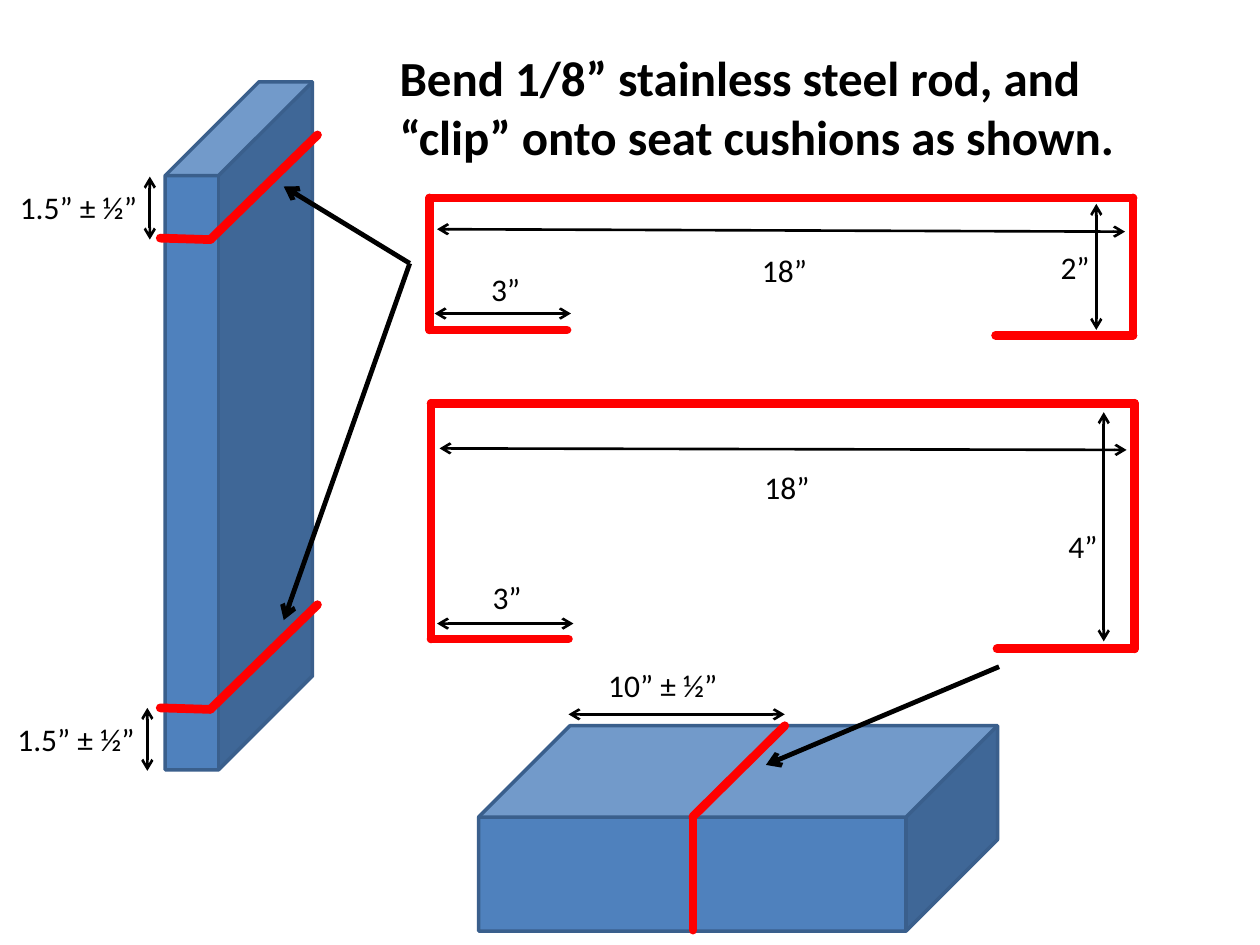
"""Build a slide showing how to bend steel rod into clips for seat cushions."""
from itertools import pairwise

from lxml import etree
from pptx import Presentation
from pptx.dml.color import RGBColor
from pptx.enum.shapes import MSO_CONNECTOR, MSO_SHAPE
from pptx.enum.text import MSO_ANCHOR, MSO_AUTO_SIZE, PP_ALIGN
from pptx.oxml.ns import qn
from pptx.util import Cm, Pt

STRAIGHT, CUBE = MSO_CONNECTOR.STRAIGHT, MSO_SHAPE.CUBE
TOP, LEFT, NO_FIT = MSO_ANCHOR.TOP, PP_ALIGN.LEFT, MSO_AUTO_SIZE.NONE

THEME = {
    "font": "Calibri", "title": 28, "label": 18,
    "ink": "000000", "rod": "FF0000", "cushion": "4F81BD", "edge": "3A5F8C",
    "rod_width": 5, "dimension_width": 1.5, "pointer_width": 2.75, "edge_width": 2,
}

TITLE = "Bend 1/8” stainless steel rod, and “clip” onto seat cushions as shown."
TITLE_BOX = (7.8, 0.84, 16.31, 2.64)
LABEL_HEIGHT = 1.03

CUSHIONS = [((3.33, 1.65, 2.97, 13.87), 0.637), ((9.65, 14.63, 10.46, 4.14), 0.445)]

UPRIGHT_ROD = [(3.23, 4.8), (4.24, 4.83), (6.4, 2.72)]
UPRIGHT_ROD_GAP = 9.47
FLAT_ROD = [(13.97, 18.75), (13.97, 16.46), (15.82, 14.63)]

CLIP_WIDTH, CLIP_FOOT = 14.18, 2.77
CLIPS = [
    {"left": 8.66, "top": 3.99, "left_drop": 2.66, "right_drop": 2.77},
    {"left": 8.69, "top": 8.13, "left_drop": 4.75, "right_drop": 4.95},
]

DIMENSIONS = [
    ("1.5” ± ½”", (0.15, 3.66, 3.18), (3.02, 3.56), (3.02, 4.83)),
    ("1.5” ± ½”", (0.1, 14.4, 3.18), (2.97, 14.27), (2.97, 15.54)),
    ("10” ± ½”", (12.01, 13.31, 3.18), (15.82, 14.4), (11.46, 14.4)),
    ("2”", (21.13, 4.88, 1.27), (22.1, 4.11), (22.1, 6.65)),
    ("3”", (9.65, 5.31, 1.27), (11.51, 6.32), (8.76, 6.32)),
    ("18”", (15.11, 4.93, 1.57), (22.68, 4.67), (8.81, 4.62)),
    ("3”", (9.68, 11.53, 1.27), (11.56, 12.57), (8.81, 12.57)),
    ("18”", (15.16, 9.32, 1.57), (22.71, 9.07), (8.86, 9.04)),
    ("4”", (21.29, 10.49, 1.27), (22.25, 8.31), (22.25, 12.93)),
]

POINTERS = [
    ((8.26, 5.31), (5.72, 3.76)),
    ((8.26, 5.31), (5.72, 12.5)),
    ((20.14, 13.44), (15.44, 15.42)),
]


def color(name):
    return RGBColor.from_string(THEME[name])


def add_line(s, start, end, ink, width, ends=(), cap="flat"):
    line = s.shapes.add_connector(STRAIGHT, *map(Cm, start + end))
    line.line.color.rgb = color(ink)
    line.line.width = Pt(THEME[width])
    ln = line.line._get_or_add_ln()
    ln.set("cap", cap)
    etree.SubElement(ln, qn("a:round"))
    for end_name in ends:
        etree.SubElement(ln, qn(f"a:{end_name}"), type="arrow")
    etree.SubElement(line._element.spPr, qn("a:effectLst"))


def add_rod(s, points):
    for start, end in pairwise(points):
        add_line(s, start, end, "rod", "rod_width", cap="rnd")


def add_clip(s, left, top, left_drop, right_drop):
    right = left + CLIP_WIDTH
    left_y, right_y = top + left_drop, top + right_drop
    add_rod(s, [(left + CLIP_FOOT, left_y), (left, left_y), (left, top),
                (right, top), (right, right_y), (right - CLIP_FOOT, right_y)])


def add_cushion(s, box, depth):
    sp = s.shapes.add_shape(CUBE, *map(Cm, box))
    sp.adjustments[0] = depth
    sp.shadow.inherit = False
    sp.fill.solid()
    sp.fill.fore_color.rgb = color("cushion")
    sp.line.color.rgb = color("edge")
    sp.line.width = Pt(THEME["edge_width"])


def write(sp, text, size, bold=False):
    tf = sp.text_frame
    tf.word_wrap = True
    tf.auto_size = NO_FIT
    tf.vertical_anchor = TOP
    p = tf.paragraphs[0]
    p.text = text
    p.alignment = LEFT
    p.font.name = THEME["font"]
    p.font.size = Pt(THEME[size])
    p.font.bold = bold
    p.font.color.rgb = color("ink")


def add_dimension(s, text, box, start, end):
    add_line(s, start, end, "ink", "dimension_width", ("headEnd", "tailEnd"))
    write(s.shapes.add_textbox(*map(Cm, (*box, LABEL_HEIGHT))), text, "label")


def main():
    prs = Presentation()
    prs.slide_width, prs.slide_height = Cm(25.4), Cm(19.05)
    s = prs.slides.add_slide(prs.slide_layouts[5])
    title = s.shapes.title
    title.left, title.top, title.width, title.height = map(Cm, TITLE_BOX)
    write(title, TITLE, "title", bold=True)

    for box, depth in CUSHIONS:
        add_cushion(s, box, depth)
    add_rod(s, UPRIGHT_ROD)
    add_rod(s, [(x, y + UPRIGHT_ROD_GAP) for x, y in UPRIGHT_ROD])
    add_rod(s, FLAT_ROD)
    for clip in CLIPS:
        add_clip(s, **clip)
    for dimension in DIMENSIONS:
        add_dimension(s, *dimension)
    for start, end in POINTERS:
        add_line(s, start, end, "ink", "pointer_width", ("tailEnd",))
    prs.save("out.pptx")


if __name__ == "__main__":
    main()
